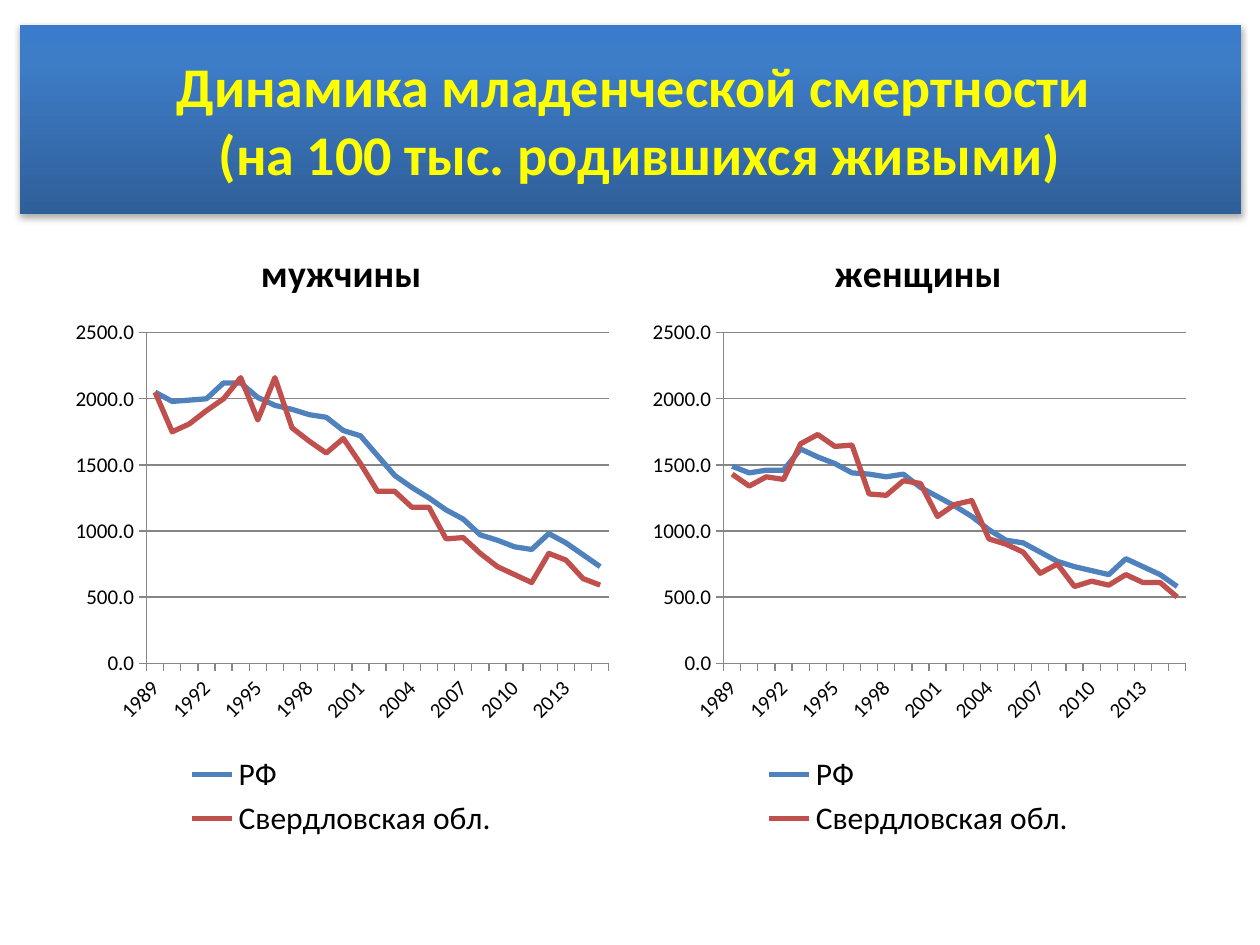
from dataclasses import dataclass

from lxml import etree
from pptx import Presentation
from pptx import util as u
from pptx.chart.data import CategoryChartData
from pptx.dml.color import RGBColor
from pptx.enum import chart as charts, dml, shapes, text
from pptx.oxml import parse_xml
from pptx.oxml.ns import nsdecls, qn


@dataclass(frozen=True)
class Theme:
    font: str = "Calibri"
    heading: RGBColor = RGBColor(0xFF, 0xFF, 0x00)
    ink: RGBColor = RGBColor(0, 0, 0)
    grid: RGBColor = RGBColor(0x86, 0x86, 0x86)
    series: tuple = (RGBColor(0x4F, 0x81, 0xBD), RGBColor(0xC0, 0x50, 0x4D))
    band: tuple = ((0, "2F5F99"), (80, "3D7CC7"), (100, "3A7CCB"))
    heading_size: u.Pt = u.Pt(32)
    chart_title_size: u.Pt = u.Pt(21.6)
    legend_size: u.Pt = u.Pt(18)
    axis_size: u.Pt = u.Pt(12)


theme = Theme()


def style_font(font, size, color=theme.ink, bold=False):
    font.name, font.size, font.bold = theme.font, size, bold
    font.color.rgb = color


years = [str(year) for year in range(1989, 2016)]
regions = ("РФ", "Свердловская обл.")
mortality = {
    "мужчины": (
        (2050, 1980, 1990, 2000, 2120, 2120, 2010, 1950, 1920, 1880, 1860, 1760, 1720, 1570,
         1420, 1330, 1250, 1160, 1090, 970, 930, 880, 860, 980, 910, 820, 730),
        (2050, 1750, 1810, 1910, 2000, 2160, 1840, 2160, 1780, 1680, 1590, 1700, 1510, 1300,
         1300, 1180, 1180, 940, 950, 830, 730, 670, 610, 830, 780, 640, 590),
    ),
    "женщины": (
        (1490, 1440, 1460, 1460, 1620, 1560, 1510, 1440, 1430, 1410, 1430, 1330, 1260, 1190,
         1110, 1010, 930, 910, 840, 770, 730, 700, 670, 790, 730, 670, 580),
        (1430, 1340, 1410, 1390, 1660, 1730, 1640, 1650, 1280, 1270, 1380, 1360, 1110, 1200,
         1230, 940, 900, 840, 680, 750, 580, 620, 590, 670, 610, 610, 500),
    ),
}

prs = Presentation()
prs.slide_width, prs.slide_height = u.Inches(10), u.Inches(7.5)
slide = prs.slides.add_slide(prs.slide_layouts[5])

# One line chart per sex, side by side
for column, (sex, rates) in enumerate(mortality.items()):
    data = CategoryChartData(number_format="0.0")
    data.categories = years
    for region, values in zip(regions, rates):
        data.add_series(region, values)
    chart = slide.shapes.add_chart(
        charts.XL_CHART_TYPE.LINE, u.Inches(0.5 + 4.58 * column), u.Inches(1.75),
        u.Inches(4.42), u.Inches(4.95), data).chart
    style_font(chart.font, theme.legend_size)

    chart.has_title = True
    chart_title = chart.chart_title.text_frame.paragraphs[0].add_run()
    chart_title.text = sex
    style_font(chart_title.font, theme.chart_title_size, bold=True)
    chart.chart_title.include_in_layout = False

    chart.has_legend = True
    chart.legend.position = charts.XL_LEGEND_POSITION.BOTTOM
    chart.legend.include_in_layout = False
    style_font(chart.legend.font, theme.legend_size)

    rate_axis, year_axis = chart.value_axis, chart.category_axis
    for axis in (rate_axis, year_axis):
        style_font(axis.tick_labels.font, theme.axis_size)
        axis.major_tick_mark = charts.XL_TICK_MARK.OUTSIDE
        axis.format.line.color.rgb = theme.grid
    rate_axis.minimum_scale, rate_axis.maximum_scale = 0, 2500
    rate_axis.major_unit = 500
    rate_axis.has_major_gridlines = True
    rate_axis.major_gridlines.format.line.color.rgb = theme.grid
    rate_axis.tick_labels.number_format = "0.0"
    rate_axis.tick_labels.number_format_is_linked = False

    # Slanted year labels, every third one shown
    year_xml = year_axis._element
    year_xml.find(qn("c:txPr")).find(qn("a:bodyPr")).set("rot", "-2700000")
    year_xml.find(qn("c:lblOffset")).addnext(
        parse_xml(f'<c:tickLblSkip {nsdecls("c")} val="3"/>'))

    plot_area = chart._chartSpace.chart.plotArea
    for old_layout in plot_area.findall(qn("c:layout")):
        plot_area.remove(old_layout)
    plot_area.insert(0, parse_xml(
        f'<c:layout {nsdecls("c")}><c:manualLayout><c:layoutTarget val="inner"/>'
        '<c:xMode val="edge"/><c:yMode val="edge"/><c:x val="0.15"/><c:y val="0.18"/>'
        '<c:w val="0.83"/><c:h val="0.53"/></c:manualLayout></c:layout>'))

    for line, color in zip(chart.plots[0].series, theme.series):
        line.smooth = False
        line.marker.style = charts.XL_MARKER_STYLE.NONE
        line.format.line.color.rgb = color
        line.format.line.width = u.Pt(3)

# Gradient band behind the heading
band = slide.shapes.add_shape(shapes.MSO_SHAPE.RECTANGLE, u.Inches(0.16), u.Inches(0.2),
                              u.Inches(9.69), u.Inches(1.5))
band.line.fill.background()
band.fill.gradient()
band.fill.gradient_angle = 90
band_xml = band._element.spPr
stops = band_xml.find(qn("a:gradFill")).find(qn("a:gsLst"))
for old_stop in list(stops):
    stops.remove(old_stop)
for position, color in theme.band:
    stop = etree.SubElement(stops, qn("a:gs"), pos=str(position * 1000))
    etree.SubElement(stop, qn("a:srgbClr"), val=color)
band.shadow.inherit = False
shadow = etree.SubElement(band_xml.find(qn("a:effectLst")), qn("a:outerShdw"),
                          blurRad=str(u.Pt(3.5)), dist=str(u.Pt(2.2)),
                          dir="5400000", rotWithShape="0")
shadow_color = etree.SubElement(shadow, qn("a:srgbClr"), val="000000")
etree.SubElement(shadow_color, qn("a:alpha"), val="32000")

# Heading, brought in front of the band
heading = slide.shapes.title
heading.left, heading.top = u.Inches(0.58), u.Inches(0.32)
heading.width, heading.height = u.Inches(9), u.Inches(1.25)
slide.shapes._spTree.append(heading._element)
heading.text_frame.word_wrap = True
heading.text_frame.vertical_anchor = text.MSO_ANCHOR.MIDDLE
paragraph = heading.text_frame.paragraphs[0]
paragraph.alignment = text.PP_ALIGN.CENTER
for row, wording in enumerate(("Динамика младенческой смертности ",
                               "(на 100 тыс. родившихся живыми)")):
    if row:
        paragraph.add_line_break()
    run = paragraph.add_run()
    run.text = wording
    style_font(run.font, theme.heading_size, theme.heading, bold=True)

prs.save("out.pptx")
